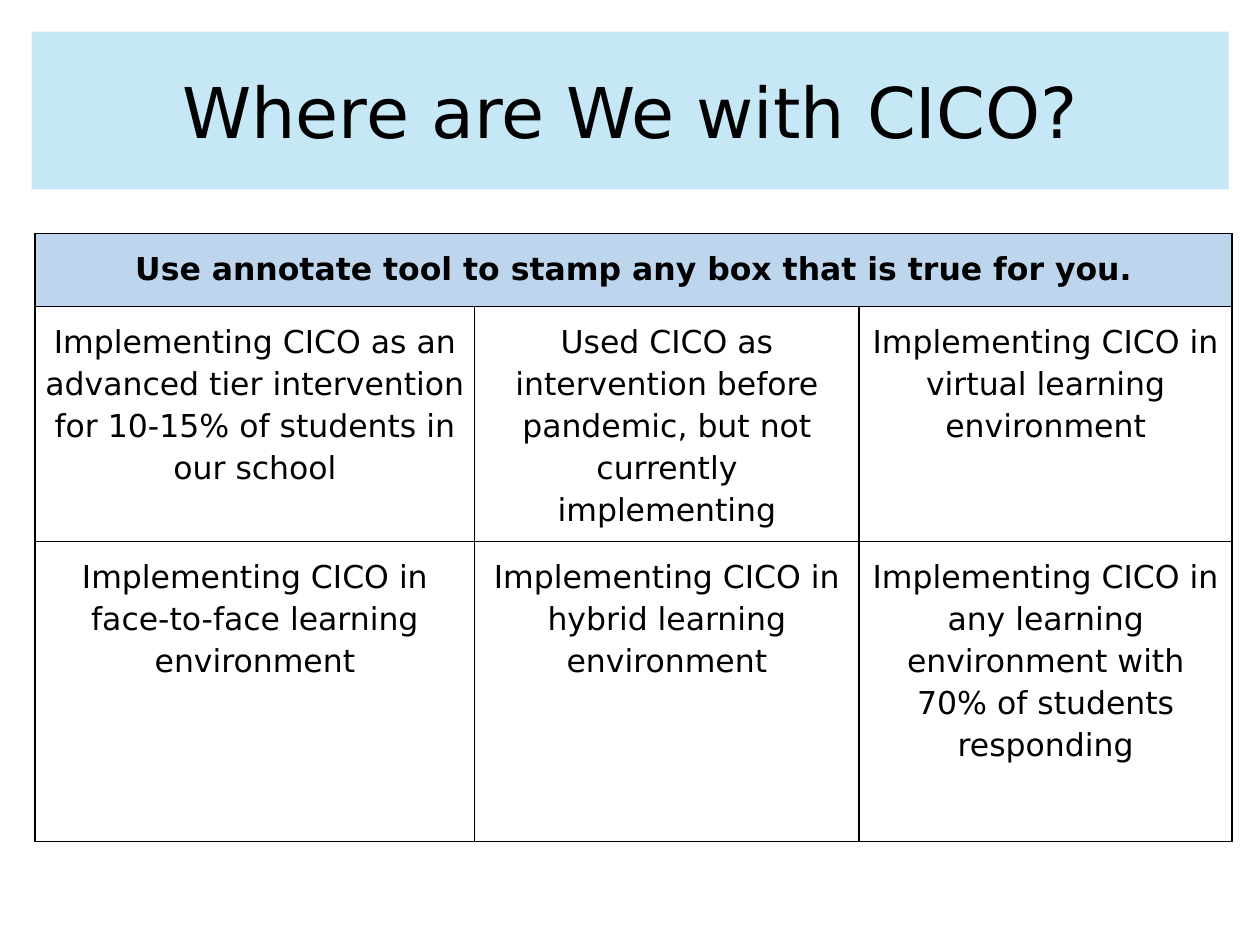
from lxml import etree
from pptx import Presentation
from pptx.dml.color import RGBColor as RGB
from pptx.enum.text import MSO_ANCHOR as Anchor, PP_ALIGN as Align
from pptx.oxml.ns import qn
from pptx.util import Cm, Pt

COLORS = {"text": "000000", "border": "000000", "title": "A9DCF2", "header": "BDD6EE"}

HEADER = "Use annotate tool to stamp any box that is true for you."
BOXES = [
    ["Implementing CICO as an advanced tier intervention for 10-15% of students in our school",
     "Used CICO as intervention before pandemic, but not currently implementing",
     "Implementing CICO in virtual learning environment"],
    ["Implementing CICO in face-to-face learning environment",
     "Implementing CICO in hybrid learning environment",
     "Implementing CICO in any learning environment with 70% of students responding"],
]


class Deck:
    font = "DejaVu Sans"

    def __init__(self, prs):
        self.s = prs.slides.add_slide(prs.slide_layouts[5])

    def text(self, tf, text, size, bold=False):
        p = tf.paragraphs[0]
        p.text = text
        p.alignment = Align.CENTER
        p.font.name, p.font.size, p.font.bold = self.font, Pt(size), bold
        p.font.color.rgb = RGB.from_string(COLORS["text"])
        return p

    def title(self, text, left, top, width, height):
        sp = self.s.shapes.title
        sp.left, sp.top, sp.width, sp.height = Cm(left), Cm(top), Cm(width), Cm(height)
        sp.fill.solid()
        sp.fill.fore_color.rgb = RGB.from_string(COLORS["title"])
        color = sp.fill._xPr.find(qn("a:solidFill"))[0]
        etree.SubElement(color, qn("a:alpha"), val="67000")
        sp.text_frame.vertical_anchor = Anchor.MIDDLE
        self.text(sp.text_frame, text, 40)

    def borders(self, cell):
        tc_pr = cell._tc.get_or_add_tcPr()
        for i, side in enumerate(("lnL", "lnR", "lnT", "lnB")):
            ln = etree.Element(qn(f"a:{side}"), w=str(Pt(1)))
            fill = etree.SubElement(ln, qn("a:solidFill"))
            etree.SubElement(fill, qn("a:srgbClr"), val=COLORS["border"])
            tc_pr.insert(i, ln)

    def cell(self, cell, text, fill=None, bold=False):
        cell.margin_left = cell.margin_right = Cm(0.18)
        cell.margin_top = cell.margin_bottom = Cm(0.25)
        if fill:
            cell.fill.solid()
            cell.fill.fore_color.rgb = RGB.from_string(COLORS[fill])
        else:
            cell.fill.background()
        self.borders(cell)
        if text:
            self.text(cell.text_frame, text, 18, bold).line_spacing = 1.15

    def table(self, header, rows, left, top, widths, heights):
        frame = self.s.shapes.add_table(len(heights), len(widths), Cm(left), Cm(top),
                                        Cm(sum(widths)), Cm(sum(heights)))
        table = frame.table
        for column, width in zip(table.columns, widths):
            column.width = Cm(width)
        for row, height in zip(table.rows, heights):
            row.height = Cm(height)
        # Header across all columns
        table.cell(0, 0).merge(table.cell(0, len(widths) - 1))
        for c in range(len(widths)):
            self.cell(table.cell(0, c), "" if c else header, "header", bold=True)
        # Boxes to stamp
        for r, texts in enumerate(rows, 1):
            for c, text in enumerate(texts):
                self.cell(table.cell(r, c), text)


def main():
    prs = Presentation()
    prs.slide_width, prs.slide_height = Cm(25.4), Cm(19.05)
    deck = Deck(prs)
    deck.title("Where are We with CICO?", 0.64, 0.64, 24.13, 3.18)
    deck.table(HEADER, BOXES, 0.71, 4.71, [8.86, 7.75, 7.52], [1.47, 3.91, 6.05])
    prs.save("out.pptx")


if __name__ == "__main__":
    main()
